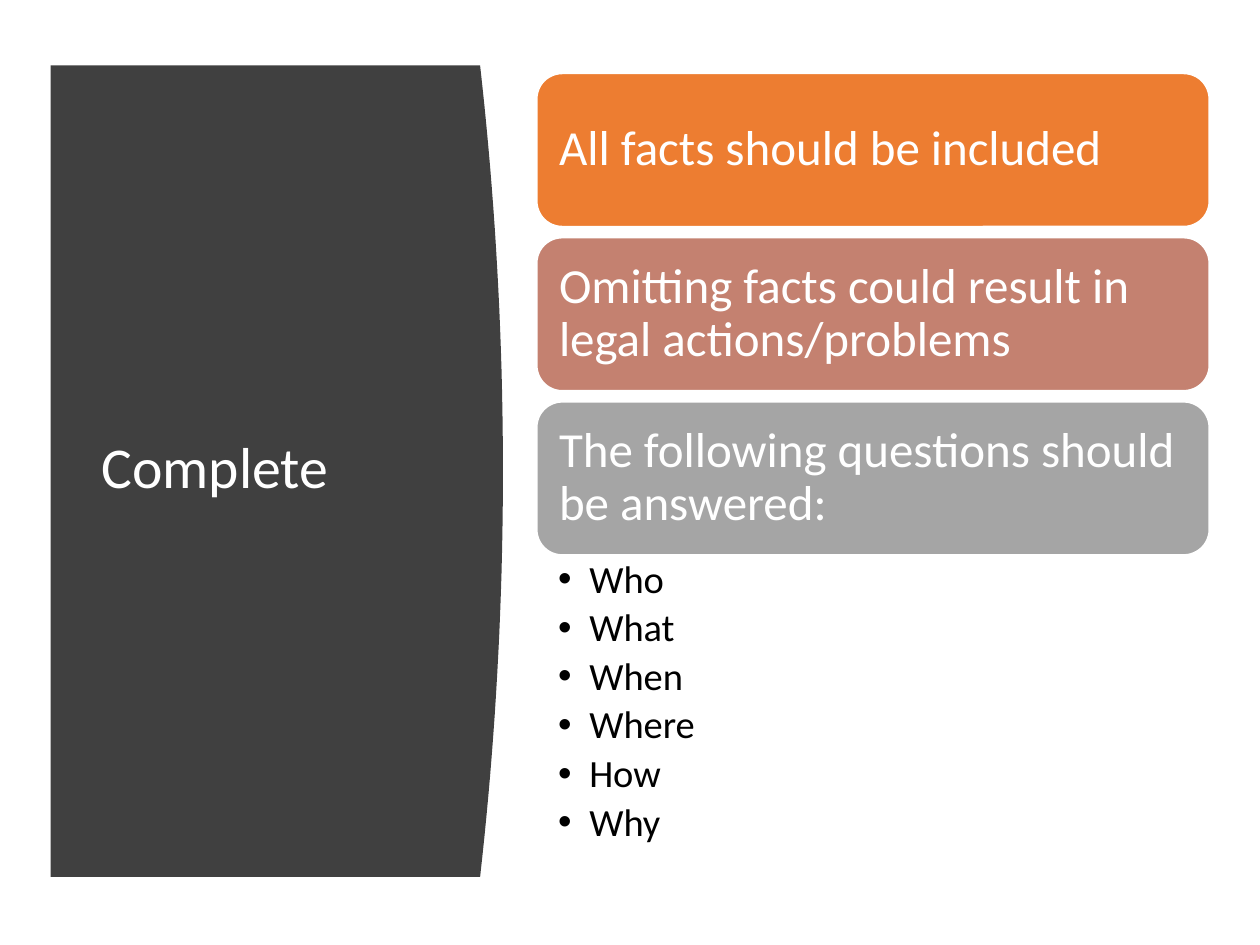
from lxml import etree
from pptx import Presentation
from pptx import util as u
from pptx.dml.color import RGBColor
from pptx.enum import shapes, text
from pptx.oxml.ns import qn


def rgb(value):
    return RGBColor.from_string(value)


def write(p, content, size, color, font="Calibri", after=0):
    p.alignment = text.PP_ALIGN.LEFT
    p.line_spacing = 0.9
    p.space_before = u.Pt(0)
    p.space_after = u.Pt(after)
    r = p.add_run()
    r.text = content
    r.font.name = font
    r.font.size = u.Pt(size)
    r.font.color.rgb = rgb(color)


def set_frame(tf, anchor, left, top, right, bottom):
    tf.word_wrap = True
    tf.auto_size = text.MSO_AUTO_SIZE.NONE
    tf.vertical_anchor = anchor
    tf.margin_left, tf.margin_top = u.Cm(left), u.Cm(top)
    tf.margin_right, tf.margin_bottom = u.Cm(right), u.Cm(bottom)


def place(sp, left, top, width, height):
    sp.left, sp.top = u.Cm(left), u.Cm(top)
    sp.width, sp.height = u.Cm(width), u.Cm(height)


class Deck:
    DARK = "404040"
    LIGHT = "FFFFFF"
    INK = "000000"

    def __init__(self):
        self.prs = Presentation()
        self.prs.slide_width = u.Cm(25.4)
        self.prs.slide_height = u.Cm(19.05)
        self.s = self.prs.slides.add_slide(self.prs.slide_layouts[1])

    def curved_panel(self, left, top, width, height, bulge, steps=40):
        edge = left + width - bulge
        curve = []
        for i in range(steps + 1):
            t = 2 * i / steps - 1
            x = edge + bulge * (1 - t * t)
            curve.append((u.Cm(x), u.Cm(top + height * i / steps)))
        builder = self.s.shapes.build_freeform(u.Cm(left), u.Cm(top))
        builder.add_line_segments(curve + [(u.Cm(left), u.Cm(top + height))])
        sp = builder.convert_to_shape()
        sp.shadow.inherit = False
        sp.fill.solid()
        sp.fill.fore_color.rgb = rgb(self.DARK)
        sp.line.fill.background()
        self.s.shapes.title._element.addprevious(sp._element)

    def title(self, content, *box):
        sp = self.s.shapes.title
        place(sp, *box)
        set_frame(sp.text_frame, text.MSO_ANCHOR.MIDDLE, 0.25, 0.13, 0.25, 0.13)
        write(sp.text_frame.paragraphs[0], content, 33, self.LIGHT)

    def card(self, content, color, *box):
        sp = self.s.shapes.add_shape(
            shapes.MSO_SHAPE.ROUNDED_RECTANGLE, *map(u.Cm, box))
        sp.shadow.inherit = False
        sp.fill.solid()
        sp.fill.fore_color.rgb = rgb(color)
        sp.line.color.rgb = rgb(self.LIGHT)
        sp.line.width = u.Pt(1)
        set_frame(sp.text_frame, text.MSO_ANCHOR.MIDDLE, 0.3, 0.3, 0.3, 0.3)
        write(sp.text_frame.paragraphs[0], content, 28, self.LIGHT)

    def bullets(self, items, *box):
        sp = self.s.placeholders[1]
        place(sp, *box)
        tf = sp.text_frame
        set_frame(tf, text.MSO_ANCHOR.TOP, 0.43, 0.1, 0.55, 0.1)
        for i, item in enumerate(items):
            p = tf.add_paragraph() if i else tf.paragraphs[0]
            p.level = 1
            write(p, item, 22, self.INK, after=4)
            pPr = p._p.get_or_add_pPr()
            pPr.set("marL", str(u.Cm(0.63)))
            pPr.set("indent", str(u.Cm(-0.63)))
            etree.SubElement(pPr, qn("a:buFont"), typeface="Arial")
            etree.SubElement(pPr, qn("a:buChar"), char="•")


def main():
    deck = Deck()
    deck.curved_panel(1.02, 1.32, 9.12, 16.36, bulge=0.46)
    deck.title("Complete", 1.8, 2.82, 7.11, 13.31)

    left, top, width, height, pitch = 10.82, 1.48, 13.56, 3.09, 3.31
    cards = [
        ("All facts should be included", "ED7D31"),
        ("Omitting facts could result in legal actions/problems", "C48170"),
        ("The following questions should be answered:", "A5A5A5"),
    ]
    for i, (content, color) in enumerate(cards):
        deck.card(content, color, left, top + i * pitch, width, height)

    questions = ["Who", "What", "When", "Where", "How", "Why"]
    list_top = top + (len(cards) - 1) * pitch + height
    deck.bullets(questions, left, list_top, width, 6.27)
    deck.prs.save("out.pptx")


if __name__ == "__main__":
    main()
